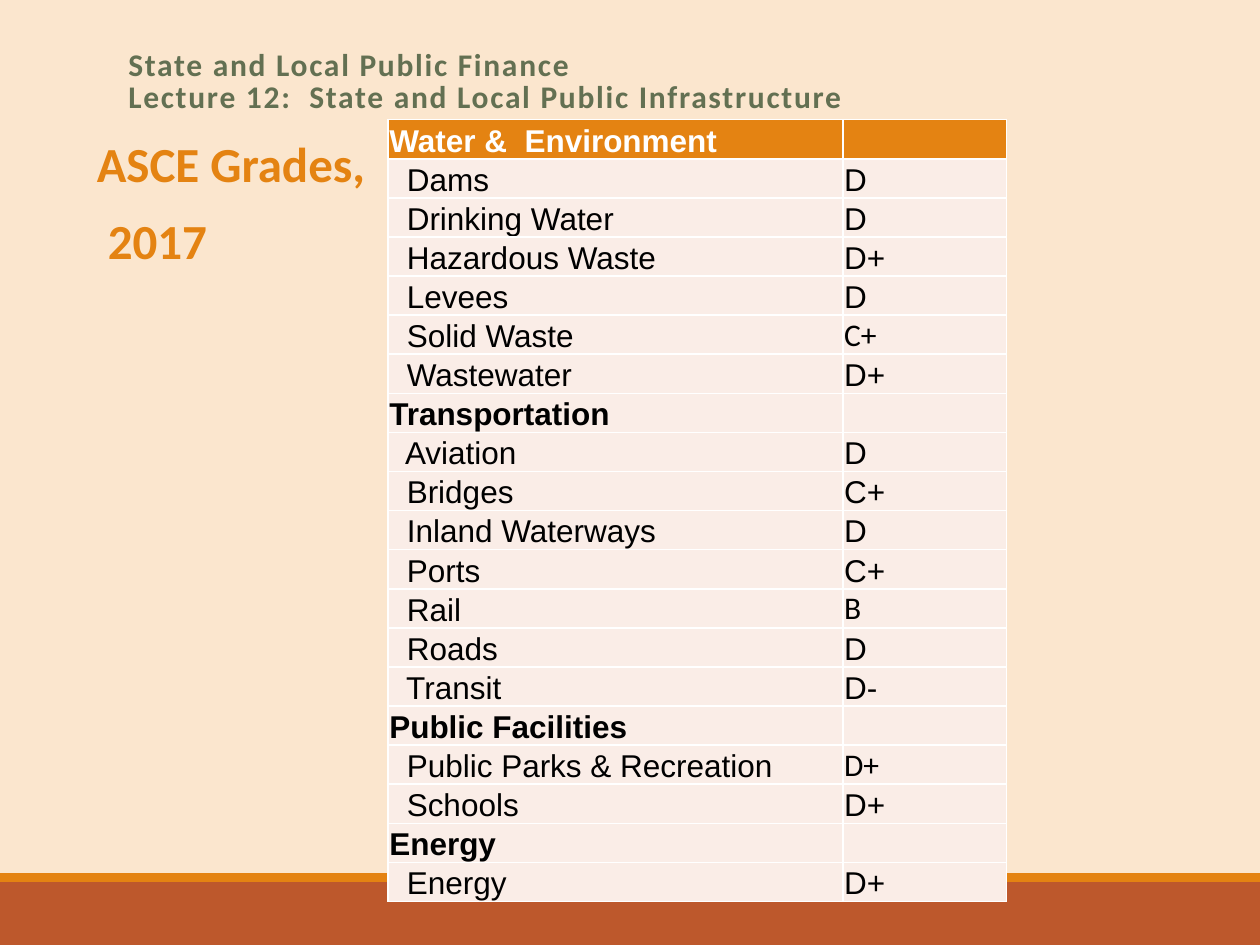
from typing import NamedTuple, Optional

from pptx import Presentation
from pptx.dml.color import RGBColor
from pptx.enum import shapes, text
from pptx.util import Inches, Pt

CREAM = RGBColor(0xFB, 0xE6, 0xCE)
RUST = RGBColor(0xBD, 0x58, 0x2C)
ORANGE = RGBColor(0xE4, 0x83, 0x12)
GREEN = RGBColor(0x63, 0x70, 0x52)
BLUSH = RGBColor(0xFA, 0xED, 0xE7)
WHITE = RGBColor(0xFF, 0xFF, 0xFF)
BLACK = RGBColor(0, 0, 0)


class Box(NamedTuple):
    left: float
    top: float
    width: float
    height: float


class Bar(NamedTuple):
    box: Box
    fill: RGBColor
    line: Optional[RGBColor] = None


class Grade(NamedTuple):
    name: str
    mark: str = ""
    font: str = "Arial"


BARS = [
    Bar(Box(0, 7, 10, 0.5), RUST),
    Bar(Box(0, 6.93, 10, 0.07), ORANGE),
    Bar(Box(0.5, 1.42, 9.08, 0.92), CREAM, CREAM),
]

GRADES = [
    Grade("Water &  Environment"),
    Grade("Dams", "D"),
    Grade("Drinking Water", "D"),
    Grade("Hazardous Waste", "D+"),
    Grade("Levees", "D"),
    Grade("Solid Waste", "C+", "Calibri"),
    Grade("Wastewater", "D+"),
    Grade("Transportation"),
    Grade("Aviation", "D"),
    Grade("Bridges", "C+"),
    Grade("Inland Waterways", "D"),
    Grade("Ports", "C+"),
    Grade("Rail", "B", "Calibri"),
    Grade("Roads", "D"),
    Grade("Transit", "D-"),
    Grade("Public Facilities"),
    Grade("Public Parks & Recreation", "D+", "Calibri"),
    Grade("Schools", "D+"),
    Grade("Energy"),
    Grade("Energy", "D+"),
]


def place(box: Box) -> list:
    return [Inches(side) for side in box]


def style(para, size: float, color: RGBColor, bold: bool, face: str = "Calibri") -> None:
    for run in para.runs:
        run.font.size = Pt(size)
        run.font.color.rgb = color
        run.font.bold = bold
        run.font.name = face


def draw_bar(slide, bar: Bar) -> None:
    shape = slide.shapes.add_shape(shapes.MSO_SHAPE.RECTANGLE, *place(bar.box))
    shape.shadow.inherit = False
    shape.fill.solid()
    shape.fill.fore_color.rgb = bar.fill
    if bar.line is None:
        shape.line.fill.background()
    else:
        shape.line.color.rgb = bar.line
        shape.line.width = Pt(1.25)


def add_text(slide, box: Box, words: str, anchor):
    frame = slide.shapes.add_textbox(*place(box)).text_frame
    frame.word_wrap = True
    frame.vertical_anchor = anchor
    frame.text = words
    return frame


def draw_title(slide) -> None:
    words = "State and Local Public Finance\vLecture 12:  State and Local Public Infrastructure"
    frame = add_text(slide, Box(0.92, 0.33, 8.25, 0.65), words, text.MSO_ANCHOR.MIDDLE)
    para = frame.paragraphs[0]
    para.line_spacing = 0.85
    style(para, 18, GREEN, True)
    for run in para.runs:
        run._r.get_or_add_rPr().set("spc", "100")


def draw_head(slide) -> None:
    frame = add_text(slide, Box(0.67, 1.06, 9, 2.08), "ASCE Grades,\n 2017", text.MSO_ANCHOR.TOP)
    for para in frame.paragraphs:
        para.line_spacing = 0.9
        para.space_before = Pt(12)
        para.space_after = Pt(2)
        props = para._p.get_or_add_pPr()
        props.set("marL", str(Inches(0.1)))
        props.set("indent", str(Inches(-0.1)))
        style(para, 28, ORANGE, True)


def fill_cell(cell, words: str, face: str, bold: bool, top: bool) -> None:
    cell.fill.solid()
    cell.fill.fore_color.rgb = ORANGE if top else BLUSH
    cell.vertical_anchor = text.MSO_ANCHOR.BOTTOM
    cell.margin_left = cell.margin_right = cell.margin_top = Inches(0.01)
    cell.margin_bottom = 0
    if words:
        cell.text_frame.text = words
        style(cell.text_frame.paragraphs[0], 18, WHITE if top else BLACK, bold, face)


def draw_table(slide) -> None:
    high = 0.3
    box = Box(3.08, 0.95, 4.91, high * len(GRADES))
    table = slide.shapes.add_table(len(GRADES), 2, *place(box)).table
    table.horz_banding = False
    for col, width in zip(table.columns, (3.61, 1.3)):
        col.width = Inches(width)
    for i, grade in enumerate(GRADES):
        table.rows[i].height = Inches(high)
        group = not grade.mark
        name = grade.name if group else "  " + grade.name
        fill_cell(table.cell(i, 0), name, "Arial", group, i == 0)
        fill_cell(table.cell(i, 1), grade.mark, grade.font, False, i == 0)


def main() -> None:
    deck = Presentation()
    deck.slide_width, deck.slide_height = Inches(10), Inches(7.5)
    slide = deck.slides.add_slide(deck.slide_layouts[6])
    slide.background.fill.solid()
    slide.background.fill.fore_color.rgb = CREAM
    for bar in BARS:
        draw_bar(slide, bar)
    draw_title(slide)
    draw_head(slide)
    draw_table(slide)
    deck.save("out.pptx")


if __name__ == "__main__":
    main()
